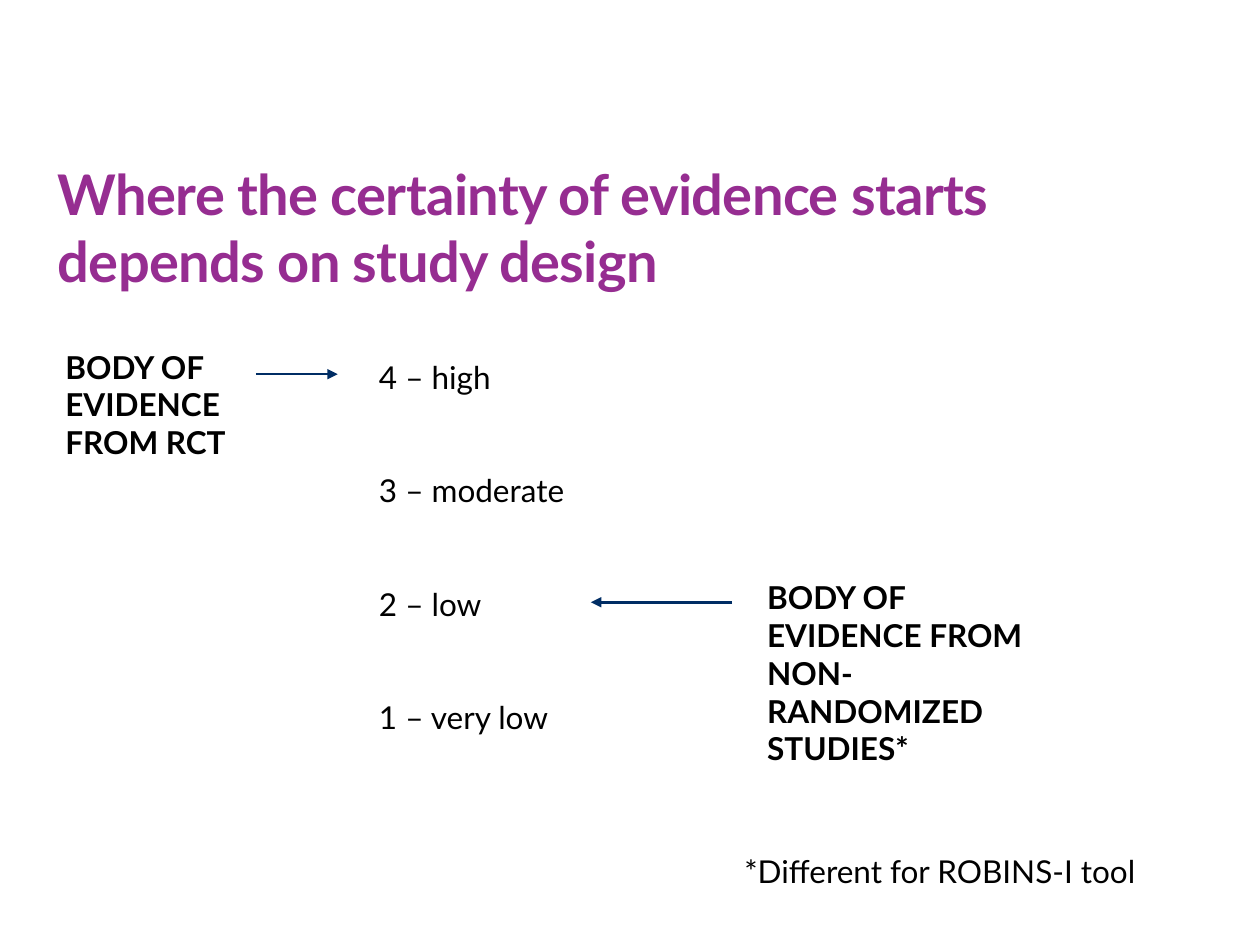
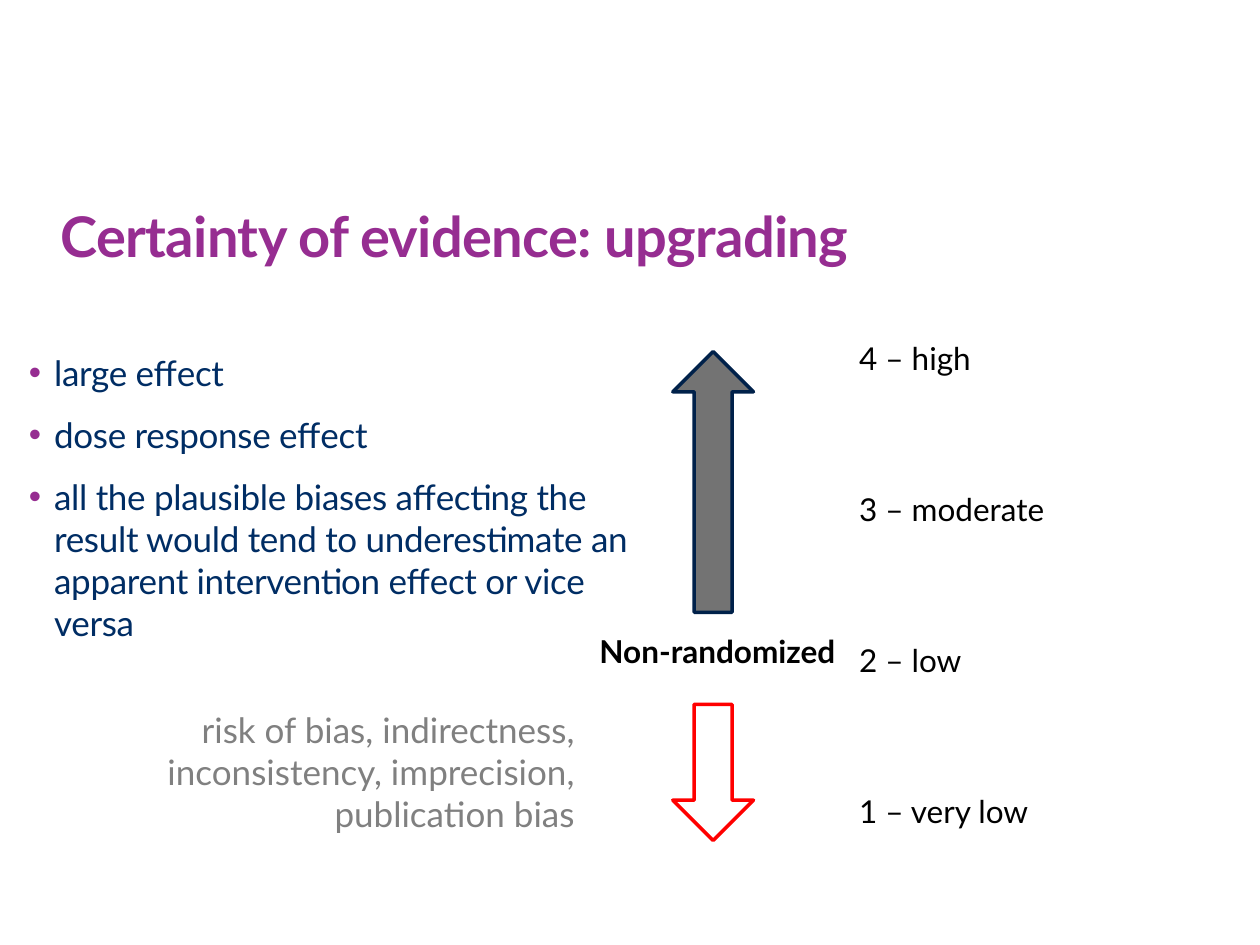
from lxml import etree
from pptx import Presentation
from pptx.dml.color import RGBColor
from pptx.enum import shapes, text
from pptx.oxml.ns import qn
from pptx.util import Inches, Pt

PURPLE = RGBColor(0x96, 0x2D, 0x91)
NAVY = RGBColor(0x00, 0x2D, 0x64)
DARK_NAVY = RGBColor(0x00, 0x21, 0x4A)
BLACK = RGBColor(0, 0, 0)
GRAY = RGBColor(0x80, 0x80, 0x80)
DARK_GRAY = RGBColor(0x73, 0x73, 0x73)
RED = RGBColor(0xFF, 0, 0)
FONT = "Lato"
LEVELS = ["4 – high", "3 – moderate", "2 – low", "1 – very low"]
LINE_HEIGHT = 21.6


class Pages:
    """Holds the deck, its style and the slide being built."""

    def __init__(self):
        self.deck = Presentation()
        self.deck.slide_width, self.deck.slide_height = Inches(10), Inches(7.5)
        self.page = None

    def new_page(self):
        self.page = self.deck.slides.add_slide(self.deck.slide_layouts[6])

    def text(self, lines, left, top, width, height, size=18, color=BLACK, bold=False,
             gap=0, spacing=0, inset=True, bullet=False,
             align=text.PP_ALIGN.LEFT, anchor=text.MSO_ANCHOR.TOP):
        box = self.page.shapes.add_textbox(Inches(left), Inches(top), Inches(width), Inches(height))
        frame = box.text_frame
        frame.word_wrap = True
        frame.vertical_anchor = anchor
        if not inset:
            frame.margin_left = frame.margin_top = frame.margin_right = frame.margin_bottom = 0
        for number, line in enumerate(lines):
            para = frame.add_paragraph() if number else frame.paragraphs[0]
            para.text = line
            para.alignment = align
            if number:
                para.space_before = Pt(gap)
            if bullet:
                self.bullet(para)
            font = para.font
            font.name, font.size, font.bold = FONT, Pt(size), bold
            font.color.rgb = color
            if spacing:
                for span in para.runs:
                    span._r.get_or_add_rPr().set("spc", str(round(spacing * 100)))

    def bullet(self, para):
        settings = para._p.get_or_add_pPr()
        settings.set("marL", str(Inches(0.2)))
        settings.set("indent", str(Inches(-0.2)))
        tint = etree.SubElement(settings, qn("a:buClr"))
        etree.SubElement(tint, qn("a:srgbClr")).set("val", str(PURPLE))
        etree.SubElement(settings, qn("a:buFont")).set("typeface", "Arial")
        etree.SubElement(settings, qn("a:buChar")).set("char", "•")

    def title(self, wording, left, top, width, height):
        self.text([wording], left, top, width, height, size=32, color=PURPLE, bold=True,
                  spacing=-0.4, inset=False, anchor=text.MSO_ANCHOR.BOTTOM)

    def levels(self, left, top, height, empty_lines):
        self.text(LEVELS, left, top, 2.2, height, gap=empty_lines * LINE_HEIGHT)

    def pointer(self, start, end, top):
        line = self.page.shapes.add_connector(
            shapes.MSO_CONNECTOR.STRAIGHT, Inches(start), Inches(top), Inches(end), Inches(top))
        line.line.color.rgb = NAVY
        line.line.width = Pt(1.5)
        etree.SubElement(line.line._get_or_add_ln(), qn("a:tailEnd")).set("type", "triangle")
        etree.SubElement(line._element.spPr, qn("a:effectLst"))

    def block_arrow(self, kind, top, height, outline, fill=None):
        arrow = self.page.shapes.add_shape(
            kind, Inches(5.34), Inches(top), Inches(0.64), Inches(height))
        arrow.shadow.inherit = False
        arrow.adjustments[0], arrow.adjustments[1] = 0.47, 0.5
        if fill is None:
            arrow.fill.background()
        else:
            arrow.fill.solid()
            arrow.fill.fore_color.rgb = fill
        arrow.line.color.rgb = outline
        arrow.line.width = Pt(2)


def starting_points(pages):
    pages.new_page()
    pages.title("Where the certainty of evidence starts depends on study design",
                0.46, 1.21, 7.96, 1.12)
    pages.levels(2.91, 2.79, 4.14, empty_lines=2)
    pages.text(["BODY OF EVIDENCE FROM RCT"], 0.42, 2.71, 1.61, 1.01, bold=True)
    pages.text(["BODY OF EVIDENCE FROM NON-RANDOMIZED STUDIES*"],
               5.99, 4.54, 2.43, 1.6, bold=True)
    pages.pointer(2.03, 2.68, 2.97)
    pages.pointer(5.81, 4.69, 4.78)
    pages.text(["*Different for ROBINS-I tool"], 5.81, 6.71, 3.44, 0.4)


def upgrading(pages):
    pages.new_page()
    pages.title("Certainty of evidence: upgrading", 0.48, 1.44, 6.69, 0.69)
    pages.text(["large effect", "dose response effect",
                "all the plausible biases affecting the result would tend to underestimate "
                "an apparent intervention effect or vice versa"],
               0.23, 2.79, 5, 2.8, size=20, color=NAVY, gap=11.3, spacing=-0.2,
               inset=False, bullet=True)
    pages.levels(6.72, 2.64, 4.04, empty_lines=3)
    pages.text(["Non-randomized"], 4.66, 4.97, 2.47, 0.4, bold=True)
    pages.block_arrow(shapes.MSO_SHAPE.UP_ARROW, 2.79, 2.07, DARK_NAVY, DARK_GRAY)
    pages.block_arrow(shapes.MSO_SHAPE.DOWN_ARROW, 5.59, 1.08, RED)
    pages.text(["risk of bias, indirectness, inconsistency, imprecision, publication bias"],
               0.22, 5.57, 4.44, 1.2, size=20, color=GRAY, align=text.PP_ALIGN.RIGHT)


def main():
    pages = Pages()
    starting_points(pages)
    upgrading(pages)
    pages.deck.save("out.pptx")


if __name__ == "__main__":
    main()
